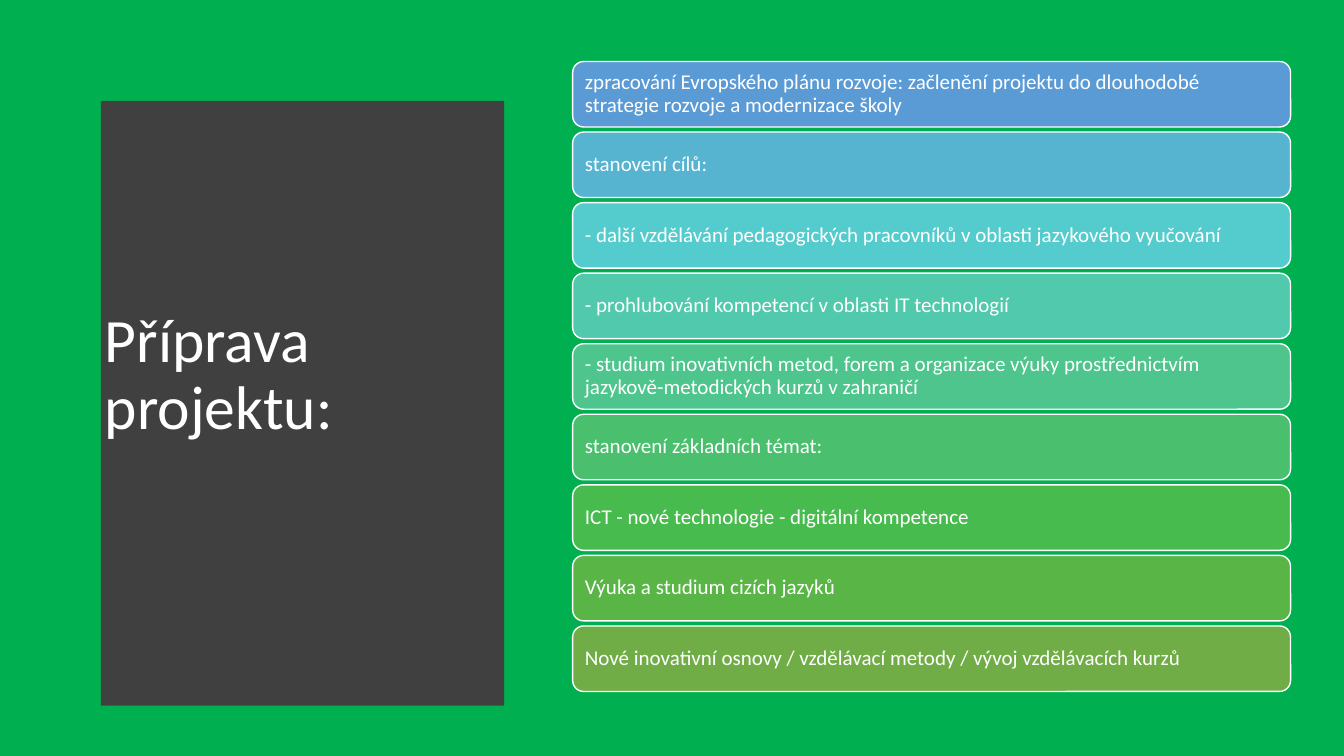
from pptx import Presentation
from pptx.dml.color import RGBColor
from pptx.enum.shapes import MSO_SHAPE
from pptx.enum.text import MSO_ANCHOR, MSO_AUTO_SIZE, PP_ALIGN
from pptx.util import Inches, Pt

TITLE = "Příprava projektu:"
STEPS = [
    ("zpracování Evropského plánu rozvoje: začlenění projektu do dlouhodobé "
     "strategie rozvoje a modernizace školy", "5B9BD5"),
    ("stanovení cílů:", "57B4D1"),
    ("- další vzdělávání pedagogických pracovníků v oblasti jazykového vyučování", "54CCCD"),
    ("- prohlubování kompetencí v oblasti IT technologií", "51C9AD"),
    ("- studium inovativních metod, forem a organizace výuky prostřednictvím\v"
     "jazykově-metodických kurzů v zahraničí", "4DC58D"),
    ("stanovení základních témat:", "4AC06E"),
    ("ICT - nové technologie - digitální kompetence", "48BB4F"),
    ("Výuka a studium cizích jazyků", "59B546"),
    ("Nové inovativní osnovy / vzdělávací metody / vývoj vzdělávacích kurzů", "70AD47"),
]
COLORS = {"background": "00B050", "panel": "404040", "white": "FFFFFF"}
FONT = "Calibri"

PANEL_LEFT, PANEL_RIGHT, PANEL_TOP, PANEL_BOTTOM = 0.53, 5.08, 0.52, 6.96
PANEL_BULGE = 0.24
CURVE_PARTS = 40
STEP_LEFT, STEP_TOP, STEP_WIDTH, STEP_HEIGHT, STEP_PITCH = 5.68, 0.61, 7.12, 0.65, 0.7
STEP_INSET = 0.09


def paint(fill, color):
    fill.solid()
    fill.fore_color.rgb = RGBColor.from_string(color)


def write(shape, text, size):
    """Put left-aligned, vertically centred white text into a shape."""
    frame = shape.text_frame
    frame.text = text
    frame.word_wrap = True
    frame.auto_size = MSO_AUTO_SIZE.NONE
    frame.vertical_anchor = MSO_ANCHOR.MIDDLE
    para = frame.paragraphs[0]
    para.alignment = PP_ALIGN.LEFT
    para.line_spacing = 0.9
    for span in para.runs:
        span.font.name = FONT
        span.font.size = Pt(size)
        span.font.color.rgb = RGBColor.from_string(COLORS["white"])
    return frame


def add_panel(page):
    """Draw the dark panel whose right side bulges as a parabola."""
    curve = []
    for part in range(CURVE_PARTS + 1):
        share = part / CURVE_PARTS
        x = PANEL_RIGHT + PANEL_BULGE * 4 * share * (1 - share)
        y = PANEL_TOP + (PANEL_BOTTOM - PANEL_TOP) * share
        curve.append((x, y))
    builder = page.shapes.build_freeform(PANEL_LEFT, PANEL_TOP, scale=Inches(1))
    builder.add_line_segments(curve + [(PANEL_LEFT, PANEL_BOTTOM)], close=True)
    panel = builder.convert_to_shape()
    panel.shadow.inherit = False
    paint(panel.fill, COLORS["panel"])
    panel.line.fill.background()


def add_title(page):
    title = page.shapes.title
    title.left, title.top = Inches(0.94), Inches(1.11)
    title.width, title.height = Inches(3.74), Inches(5.24)
    write(title, TITLE, 44)
    tree = page.shapes._spTree
    tree.append(title._element)  # bring the title in front of the panel


def add_step(page, index, text, color):
    box = page.shapes.add_shape(
        MSO_SHAPE.ROUNDED_RECTANGLE, Inches(STEP_LEFT),
        Inches(STEP_TOP + index * STEP_PITCH), Inches(STEP_WIDTH), Inches(STEP_HEIGHT))
    box.shadow.inherit = False
    paint(box.fill, color)
    paint(box.line.fill, COLORS["white"])
    box.line.width = Pt(1)
    frame = write(box, text, 15)
    frame.margin_left = frame.margin_right = Inches(STEP_INSET)
    frame.margin_top = frame.margin_bottom = Inches(STEP_INSET)


def main():
    deck = Presentation()
    deck.slide_width, deck.slide_height = Inches(13.33), Inches(7.5)
    page = deck.slides.add_slide(deck.slide_layouts.get_by_name("Title Only"))
    paint(page.background.fill, COLORS["background"])
    add_panel(page)
    add_title(page)
    for index, (text, color) in enumerate(STEPS):
        add_step(page, index, text, color)
    deck.save("out.pptx")


if __name__ == "__main__":
    main()
